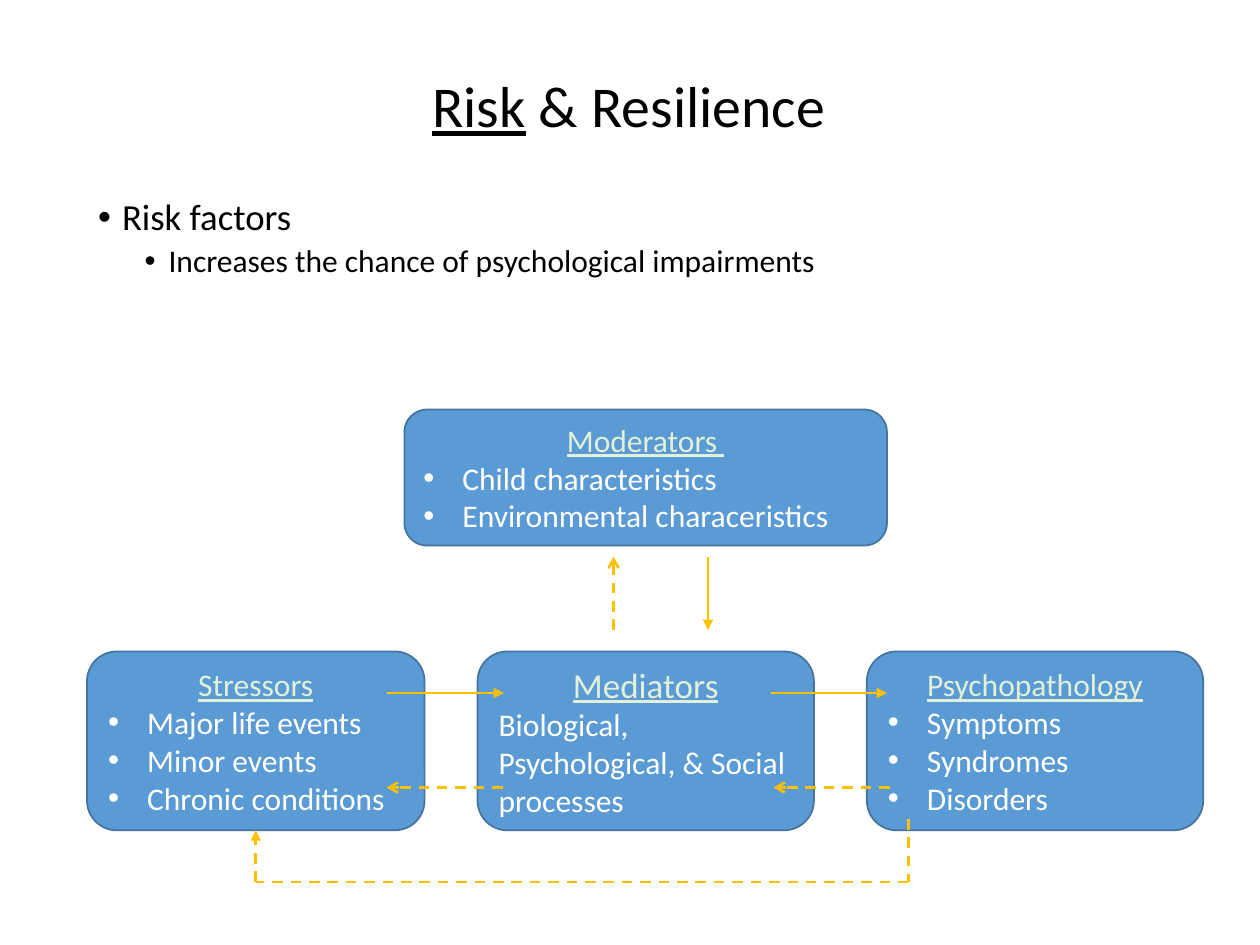
from dataclasses import dataclass

from lxml import etree
from pptx import Presentation
from pptx.dml.color import RGBColor
from pptx.enum.dml import MSO_LINE
from pptx.enum.shapes import MSO_CONNECTOR, MSO_SHAPE
from pptx.enum.text import MSO_ANCHOR, PP_ALIGN
from pptx.oxml.ns import qn
from pptx.util import Inches, Pt

BOX = MSO_SHAPE.FLOWCHART_ALTERNATE_PROCESS
STRAIGHT = MSO_CONNECTOR.STRAIGHT
DASH = MSO_LINE.DASH
MIDDLE = MSO_ANCHOR.MIDDLE
CENTER = PP_ALIGN.CENTER
LEFT = PP_ALIGN.LEFT
BOTTOM_SIDE = 2


@dataclass(frozen=True)
class Theme:
    font: str = "Calibri"
    ink: str = "000000"
    box_fill: str = "5B9BD5"
    box_line: str = "43739E"
    heading: str = "E2F0D9"
    item: str = "FFFFFF"
    arrow: str = "FFC000"
    title_size: float = 33
    lead_size: float = 21
    mediator_size: float = 20
    text_size: float = 18


theme = Theme()


def add_run(paragraph, text, size, color, underline=False):
    run = paragraph.add_run()
    run.text = text
    formats = {"name": theme.font, "size": Pt(size), "underline": underline}
    for attribute, value in formats.items():
        setattr(run.font, attribute, value)
    run.font.color.rgb = RGBColor.from_string(color)


def set_bullet(paragraph, margin, hanging):
    properties = paragraph._p.get_or_add_pPr()
    properties.set("marL", str(Inches(margin)))
    properties.set("indent", str(-Inches(hanging)))
    etree.SubElement(properties, qn("a:buFont")).set("typeface", "Arial")
    etree.SubElement(properties, qn("a:buChar")).set("char", "•")


prs = Presentation()
prs.slide_width, prs.slide_height = Inches(10), Inches(7.5)
slide = prs.slides.add_slide(prs.slide_layouts[6])
shapes = slide.shapes

# Title
title = shapes.add_textbox(Inches(0.68), Inches(0.14), Inches(8.62), Inches(1.45)).text_frame
title.word_wrap = True
title.vertical_anchor = MIDDLE
heading = title.paragraphs[0]
heading.alignment = CENTER
heading.line_spacing = 0.9
add_run(heading, "Risk", theme.title_size, theme.ink, underline=True)
add_run(heading, " & Resilience", theme.title_size, theme.ink)

# Definition of risk factors
definition = shapes.add_textbox(Inches(0.68), Inches(1.53), Inches(8.62), Inches(0.84)).text_frame
definition.word_wrap = True
points = [
    ("Risk factors", theme.lead_size, 0, 0.19, 7.5),
    ("Increases the chance of psychological impairments", theme.text_size, 1, 0.56, 3.8),
]
for number, (text, size, level, margin, space) in enumerate(points):
    point = definition.add_paragraph() if number else definition.paragraphs[0]
    formats = {"level": level, "line_spacing": 0.9, "space_before": Pt(space)}
    for attribute, value in formats.items():
        setattr(point, attribute, value)
    set_bullet(point, margin, 0.19)
    add_run(point, text, size, theme.ink)

# Boxes of the model: heading, its size, place, bulleted or not, items
model = [
    ("Stressors", theme.text_size, (0.69, 5.17, 2.68, 1.42), True,
     ["Major life events", "Minor events", "Chronic conditions"]),
    ("Mediators", theme.mediator_size, (3.79, 5.17, 2.67, 1.42), False,
     ["Biological, Psychological, & Social processes"]),
    ("Psychopathology", theme.text_size, (6.88, 5.17, 2.67, 1.42), True,
     ["Symptoms", "Syndromes", "Disorders"]),
    ("Moderators ", theme.text_size, (3.21, 3.25, 3.83, 1.08), True,
     ["Child characteristics", "Environmental characeristics"]),
]
boxes = {}
for name, size, place, bulleted, items in model:
    box = shapes.add_shape(BOX, *map(Inches, place))
    box.shadow.inherit = False
    box.fill.solid()
    box.fill.fore_color.rgb = RGBColor.from_string(theme.box_fill)
    box.line.color.rgb = RGBColor.from_string(theme.box_line)
    box.line.width = Pt(1)
    content = box.text_frame
    content.word_wrap = True
    content.vertical_anchor = MIDDLE
    content.paragraphs[0].alignment = CENTER
    add_run(content.paragraphs[0], name, size, theme.heading, underline=True)
    for text in items:
        item = content.add_paragraph()
        item.alignment = LEFT
        if bulleted:
            set_bullet(item, 0.31, 0.31)
        add_run(item, text, theme.text_size, theme.item)
    boxes[name] = box

# Solid arrows show effects, dashed ones feedback: start, end, dashed, head
links = [
    ((5.62, 4.42), (5.62, 5), False, "triangle"),
    ((4.87, 5), (4.87, 4.42), True, "arrow"),
    ((6.12, 5.5), (7.04, 5.5), False, "triangle"),
    ((3.07, 5.5), (4, 5.5), False, "triangle"),
    ((7.06, 6.25), (6.14, 6.25), True, "arrow"),
    ((3.99, 6.25), (3.07, 6.25), True, "arrow"),
    ((7.21, 6.5), (7.21, 7), True, None),
    ((7.21, 7), (2.03, 7), True, None),
    ((2.03, 7), (2.03, 6.59), True, "triangle"),
]
for start, end, dashed, head in links:
    link = shapes.add_connector(STRAIGHT, *map(Inches, start + end))
    link.line.color.rgb = RGBColor.from_string(theme.arrow)
    link.line.width = Pt(1.5)
    if dashed:
        link.line.dash_style = DASH
    if head:
        etree.SubElement(link.line._get_or_add_ln(), qn("a:tailEnd")).set("type", head)
    etree.SubElement(link._element.spPr, qn("a:effectLst"))

# The last feedback arrow returns to the stressors
link.end_connect(boxes["Stressors"], BOTTOM_SIDE)

prs.save("out.pptx")
